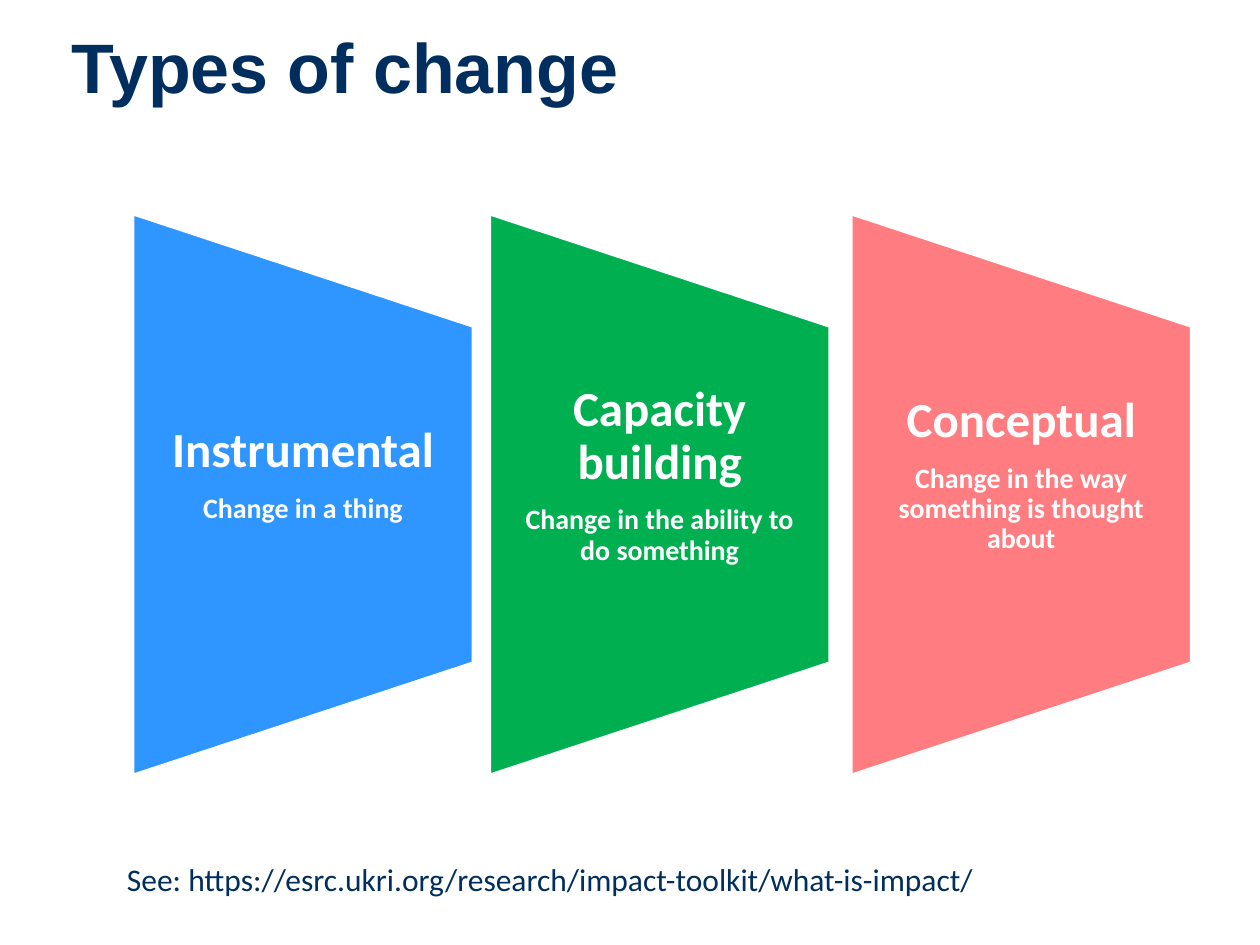
from dataclasses import dataclass

from pptx import Presentation
from pptx.dml.color import RGBColor
from pptx.enum.shapes import MSO_SHAPE as Shape
from pptx.enum.text import MSO_ANCHOR as Anchor, PP_ALIGN as Align
from pptx.util import Inches, Pt

NAVY, WHITE = "002E5E", "FFFFFF"
PANEL_WIDTH, PANEL_HEIGHT, PANEL_MIDDLE = 2.69, 4.44, 3.925
LABEL_HEIGHT = 2.67


@dataclass(frozen=True)
class Change:
    name: str
    meaning: str
    fill: str
    left: float


@dataclass(frozen=True)
class Line:
    text: str
    font: dict
    layout: dict


CHANGES = (
    Change("Conceptual", "Change in the way something is thought about", "FF7C80", 6.76),
    Change("Capacity building", "Change in the ability to do something", "00B050", 3.89),
    Change("Instrumental", "Change in a thing", "2F95FF", 1.06),
)


def color(value: str) -> RGBColor:
    return RGBColor.from_string(value)


def apply(target, values: dict) -> None:
    for name, value in values.items():
        setattr(target, name, value)


def add_text(slide, box: tuple, lines: list[Line], ink: str, frame_format: dict) -> None:
    """Place lines in a box given as left, top, width, height in inches."""
    frame = slide.shapes.add_textbox(*map(Inches, box)).text_frame
    apply(frame, {"word_wrap": True, **frame_format})
    for index, line in enumerate(lines):
        paragraph = frame.add_paragraph() if index else frame.paragraphs[0]
        apply(paragraph, line.layout)
        run = paragraph.add_run()
        run.text = line.text
        apply(run.font, line.font)
        run.font.color.rgb = color(ink)


def add_panel(slide, change: Change) -> None:
    """Draw a trapezoid turned on its side, with upright text over it."""
    center = change.left + PANEL_WIDTH / 2
    shape = slide.shapes.add_shape(
        Shape.FLOWCHART_MANUAL_OPERATION,
        Inches(center - PANEL_HEIGHT / 2), Inches(PANEL_MIDDLE - PANEL_WIDTH / 2),
        Inches(PANEL_HEIGHT), Inches(PANEL_WIDTH),
    )
    shape.rotation = 270
    shape.shadow.inherit = False
    shape.fill.solid()
    shape.fill.fore_color.rgb = color(change.fill)
    shape.line.color.rgb = color(WHITE)
    shape.line.width = Pt(1)

    font = {"name": "Calibri", "bold": True}
    layout = {"alignment": Align.CENTER, "line_spacing": 0.9}
    lines = [
        Line(change.name, {**font, "size": Pt(28)}, {**layout, "space_after": Pt(9)}),
        Line(change.meaning, {**font, "size": Pt(16)}, layout),
    ]
    box = (change.left, PANEL_MIDDLE - LABEL_HEIGHT / 2, PANEL_WIDTH, LABEL_HEIGHT)
    add_text(slide, box, lines, WHITE, {
        "vertical_anchor": Anchor.MIDDLE,
        "margin_left": Inches(0.19), "margin_right": Inches(0.19),
        "margin_top": 0, "margin_bottom": Inches(0.31),
    })


def main() -> None:
    presentation = Presentation()
    apply(presentation, {"slide_width": Inches(10), "slide_height": Inches(7.5)})
    slide = presentation.slides.add_slide(presentation.slide_layouts[6])

    title = Line("Types of change", {"name": "Arial", "size": Pt(40), "bold": True},
                 {"line_spacing": 0.9})
    add_text(slide, (0.47, 0.21, 8.9, 0.94), [title], NAVY, {})
    for change in CHANGES:
        add_panel(slide, change)
    reference = Line("See: https://esrc.ukri.org/research/impact-toolkit/what-is-impact/",
                     {"name": "Calibri", "size": Pt(18)}, {})
    add_text(slide, (0.91, 6.78, 8.03, 0.4), [reference], NAVY, {})
    presentation.save("out.pptx")


if __name__ == "__main__":
    main()
